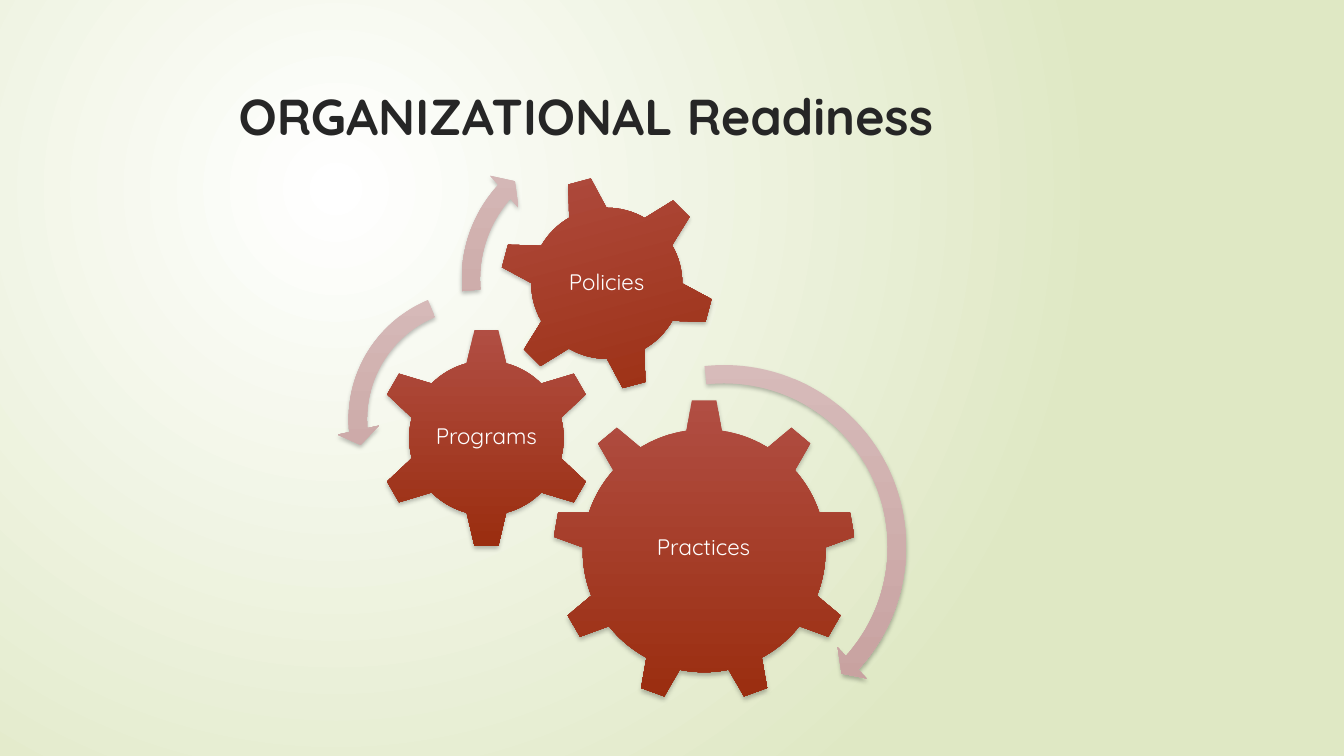
from lxml import etree
from pptx import Presentation
from pptx import util as u
from pptx.dml.color import RGBColor
from pptx.enum import shapes, text
from pptx.oxml.ns import nsdecls, qn

Pt = u.Pt
GEOMETRY = shapes.MSO_SHAPE
COLORS = {
    "title": "262626", "label": "FFFFFF",
    "gear_top": "B14E43", "gear_bottom": "9A2D0F",
    "arrow_top": "D7BBBA", "arrow_bottom": "C59E9C",
    "glow": "FFFFFF", "backdrop": "DFE8C4",
}
SHADOW = (
    f'<a:effectLst {nsdecls("a")}>'
    f'<a:outerShdw blurRad="{Pt(3)}" dist="{Pt(2)}" dir="5400000" rotWithShape="0">'
    '<a:srgbClr val="000000"><a:alpha val="25000"/></a:srgbClr>'
    '</a:outerShdw></a:effectLst>'
)
RADIAL = (
    f'<a:path {nsdecls("a")} path="circle">'
    '<a:fillToRect l="50000" t="50000" r="100000" b="100000"/></a:path>'
)

# geometry, gear (left, top, size), rotation, caption, caption box
GEARS = [
    (GEOMETRY.GEAR_9, (394.6, 285.1, 216.7), 0, "Practices", (437.8, 335.5, 129.6, 111.6)),
    (GEOMETRY.GEAR_6, (268.6, 234, 157.7), 0, "Programs", (308.2, 273.6, 78.5, 77.8)),
    (GEOMETRY.GEAR_6, (356.4, 125.3, 154.1), 345, "Policies", (390.2, 159.1, 86.4, 86.4)),
]
# geometry, arrow (left, top, size), adjustments
ARROWS = [
    (GEOMETRY.CIRCULAR_ARROW, (378.7, 252, 277.2), (0.047, 2.99, 25.326, 158.264, 0.055)),
    (GEOMETRY.LEFT_CIRCULAR_ARROW, (240.5, 198.7, 201.6), (0.065, 4.3, 104.891, 148.378, 0.075)),
    (GEOMETRY.CIRCULAR_ARROW, (321.1, 90.7, 217.4), (0.06, 3.941, 133.138, 105.082, 0.07)),
]


class GearSlide:
    font = "Quicksand"

    def __init__(self, prs):
        self.s = prs.slides.add_slide(prs.slide_layouts[6])

    def gradient(self, fill, start, end):
        fill.gradient()
        for stop, name in zip(fill.gradient_stops, (start, end)):
            stop.color.rgb = RGBColor.from_string(COLORS[name])

    def background(self):
        self.gradient(self.s.background.fill, "glow", "backdrop")
        lin = self.s.element.find(".//" + qn("a:lin"))
        lin.getparent().replace(lin, etree.fromstring(RADIAL))

    def text(self, box, words, size, color, bold=False):
        sp = self.s.shapes.add_textbox(*map(Pt, box))
        tf = sp.text_frame
        tf.word_wrap = True
        r = tf.paragraphs[0].add_run()
        r.text = words
        r.font.name, r.font.size, r.font.bold = self.font, Pt(size), bold
        r.font.color.rgb = RGBColor.from_string(COLORS[color])
        return tf

    def label(self, box, words):
        """Add a caption centred in its box with narrow margins."""
        tf = self.text(box, words, 16, "label")
        tf.vertical_anchor = text.MSO_ANCHOR.MIDDLE
        tf.margin_left = tf.margin_right = tf.margin_top = tf.margin_bottom = Pt(1.5)
        p = tf.paragraphs[0]
        p.alignment = text.PP_ALIGN.CENTER
        p.line_spacing = 0.9

    def shaded_shape(self, geometry, place, kind):
        """Add a square, shadowed shape with a vertical gradient."""
        left, top, size = map(Pt, place)
        sp = self.s.shapes.add_shape(geometry, left, top, size, size)
        self.gradient(sp.fill, f"{kind}_top", f"{kind}_bottom")
        sp.fill.gradient_angle = 270
        sp.line.fill.background()
        sp._element.spPr.append(etree.fromstring(SHADOW))
        return sp

    def gear(self, geometry, place, rotation, words, box):
        self.shaded_shape(geometry, place, "gear").rotation = rotation
        self.label(box, words)

    def arrow(self, geometry, place, adjustments):
        sp = self.shaded_shape(geometry, place, "arrow")
        for i, value in enumerate(adjustments):
            sp.adjustments[i] = value


def main():
    prs = Presentation()
    prs.slide_width, prs.slide_height = Pt(960), Pt(540)
    slide = GearSlide(prs)
    slide.background()
    slide.text((163.4, 56.9, 633.6, 56.9), "ORGANIZATIONAL Readiness", 36, "title", bold=True)
    for gear in GEARS:
        slide.gear(*gear)
    for arrow in ARROWS:
        slide.arrow(*arrow)
    prs.save("out.pptx")


if __name__ == "__main__":
    main()
